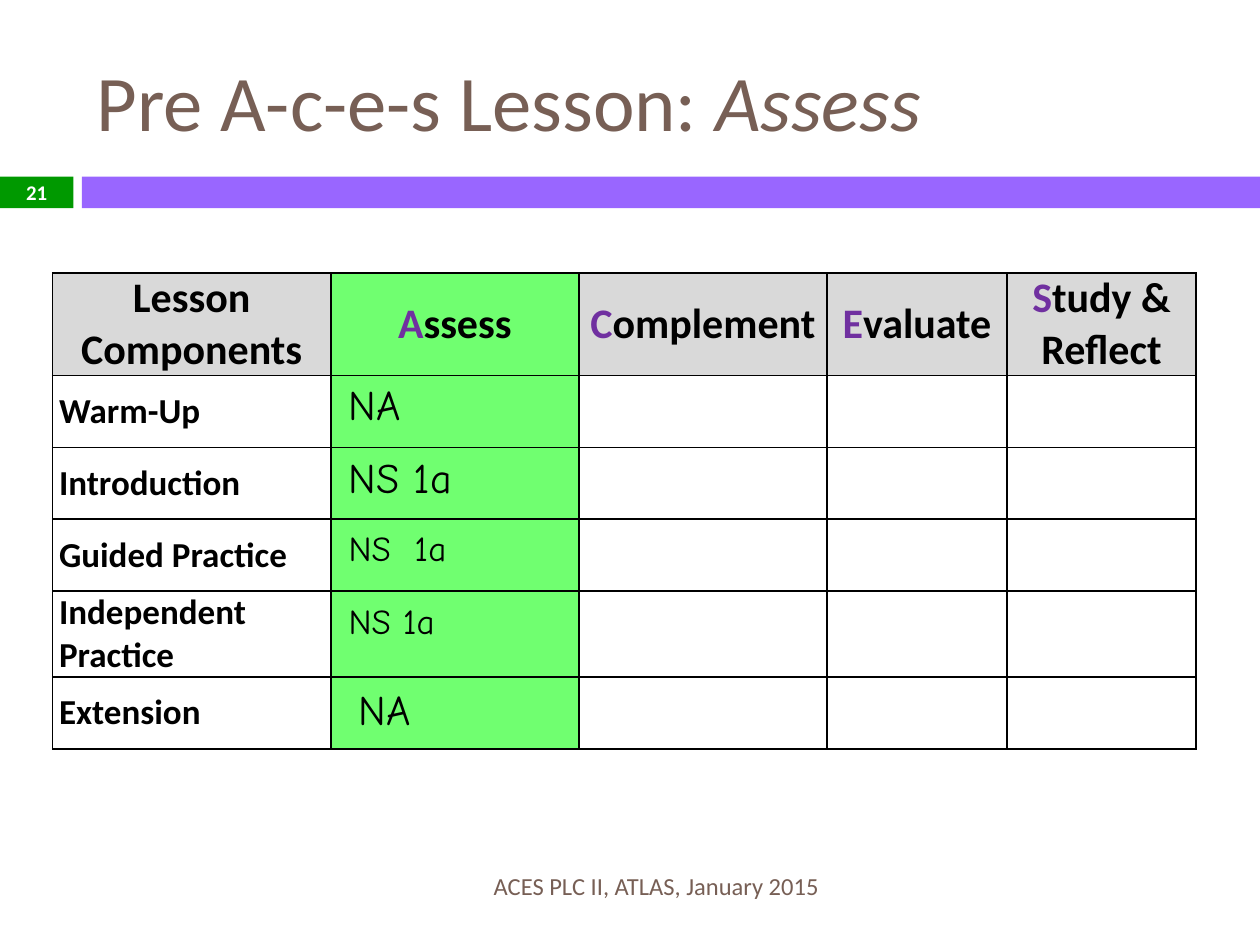
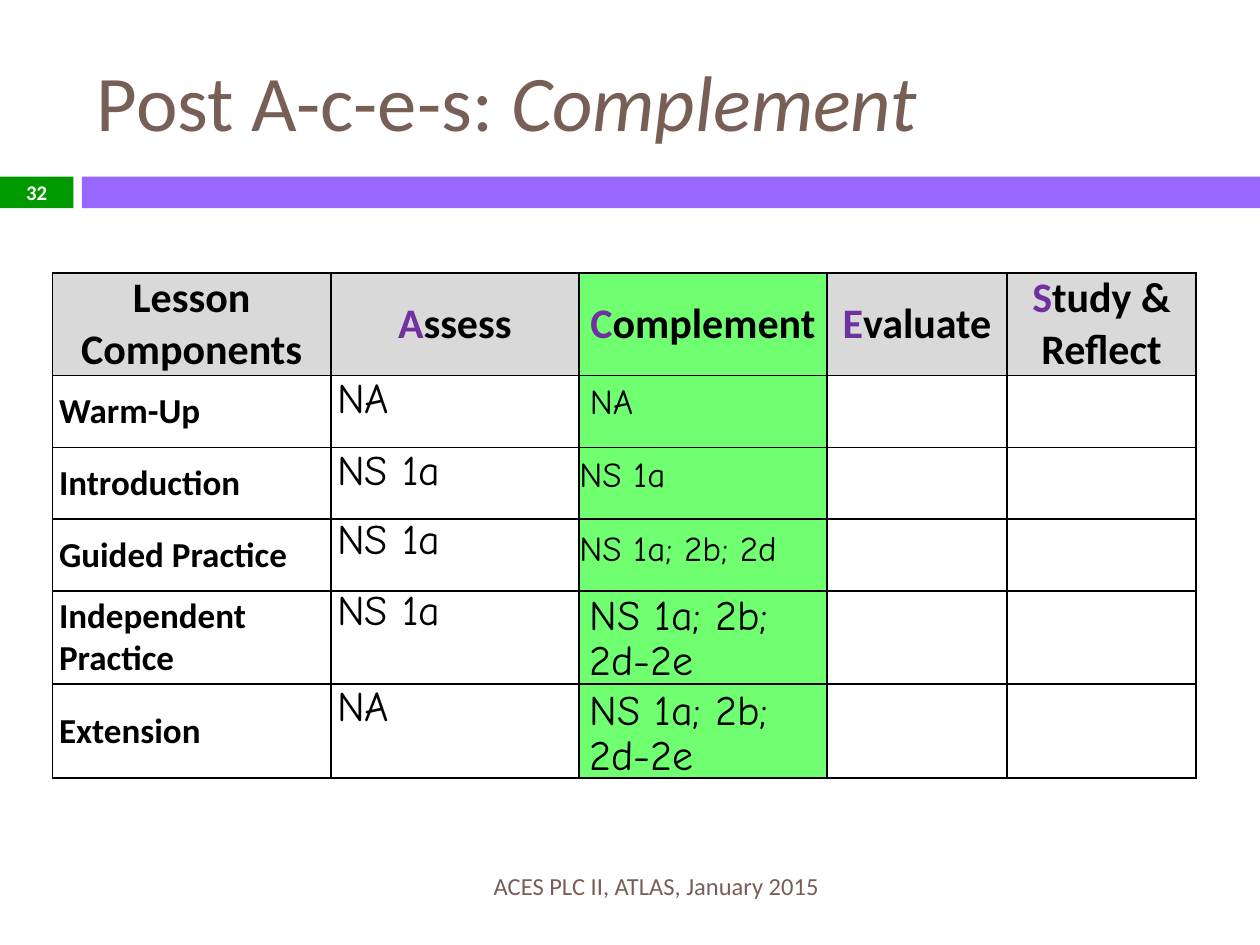
from dataclasses import dataclass
from typing import Any

from lxml import etree
from pptx import Presentation
from pptx.dml.color import RGBColor
from pptx.enum import shapes, text
from pptx.oxml import ns
from pptx.util import Cm, Pt

BLACK = RGBColor(0x00, 0x00, 0x00)
WHITE = RGBColor(0xFF, 0xFF, 0xFF)
BROWN = RGBColor(0x77, 0x5F, 0x55)
GREEN = RGBColor(0x00, 0x99, 0x00)
VIOLET = RGBColor(0x99, 0x66, 0xFF)
PURPLE = RGBColor(0x70, 0x30, 0xA0)
GREY = RGBColor(0xD9, 0xD9, 0xD9)
LIME = RGBColor(0x70, 0xFF, 0x70)

SANS = "Calibri"
HAND = "Comic Neue"
LEFT = text.PP_ALIGN.LEFT
CENTER = text.PP_ALIGN.CENTER
RIGHT = text.PP_ALIGN.RIGHT
TOP = text.MSO_ANCHOR.TOP
MIDDLE = text.MSO_ANCHOR.MIDDLE

HEADS = ["Lesson Components", "Assess", "Complement", "Evaluate", "Study & Reflect"]
PARTS = ["Warm-Up", "Introduction", "Guided Practice", "Independent Practice", "Extension"]
WIDTHS = [5.61, 5, 5, 3.63, 3.81]
FOOTER = "ACES PLC II, ATLAS, January 2015"


@dataclass
class Box:
    left: float
    top: float
    width: float
    height: float

    def place(self) -> tuple[Cm, Cm, Cm, Cm]:
        return Cm(self.left), Cm(self.top), Cm(self.width), Cm(self.height)


@dataclass
class Run:
    words: str
    font: dict[str, Any]


@dataclass
class Note:
    words: str
    left: float
    top: float
    size: int


@dataclass
class Lesson:
    number: int
    title: str
    stress: str
    focus: int
    heights: list[float]
    answers: list[tuple[str, float]]
    span: float
    notes: list[Note]


TITLE = Box(1.7, 0.64, 22.66, 2.74)
BADGE = Box(0, 3.56, 1.48, 0.64)
BAND = Box(1.65, 3.56, 23.75, 0.64)
GRID = Box(1.06, 5.5, sum(WIDTHS), 9.5)
FOOT = Box(1.7, 17.35, 15.06, 1.02)

LESSONS = [
    Lesson(
        21, "Pre A-c-e-s Lesson: ", "Assess", 1,
        [2.06, 1.45, 1.45, 1.45, 1.72, 1.45], [], 4.45,
        [
            Note("NA", 6.78, 7.62, 24),
            Note("NS 1a", 6.78, 9.1, 24),
            Note("NS  1a", 6.78, 10.58, 20),
            Note("NS 1a", 6.78, 12.06, 20),
            Note("NA", 6.98, 13.76, 24),
        ],
    ),
    Lesson(
        32, "Post A-c-e-s: ", "Complement", 2,
        [2.06, 1.45, 1.45, 1.45, 1.87, 1.9],
        [("NA", 1), ("NS 1a", 1), ("NS 1a", 0.9), ("NS 1a", 0.9), ("NA", 1)], 5.5,
        [
            Note("NA", 11.64, 7.62, 20),
            Note("NS 1a", 11.43, 9.1, 20),
            Note("NS 1a; 2b; 2d", 11.43, 10.58, 20),
            Note("NS 1a; 2b; 2d-2e", 11.64, 11.85, 24),
            Note("NS 1a; 2b; 2d-2e", 11.64, 13.76, 24),
        ],
    ),
]


def style(item: Any, values: dict[str, Any]) -> None:
    for name, value in values.items():
        setattr(item, name, value)


def font(size: float, color: RGBColor = BLACK, name: str = SANS,
         bold: bool = False, italic: bool = False) -> dict[str, Any]:
    return {"size": Pt(size), "color": color, "name": name, "bold": bold, "italic": italic}


def write(frame: Any, runs: list[Run], align: Any = LEFT, space: float = 1) -> None:
    line = frame.paragraphs[0]
    style(line, {"alignment": align, "line_spacing": space})
    for run in runs:
        piece = line.add_run()
        piece.text = run.words
        values = dict(run.font)
        piece.font.color.rgb = values.pop("color")
        style(piece.font, values)


def add_bar(slide: Any, box: Box, color: RGBColor) -> Any:
    bar = slide.shapes.add_shape(shapes.MSO_SHAPE.RECTANGLE, *box.place())
    bar.shadow.inherit = False
    bar.fill.solid()
    bar.fill.fore_color.rgb = color
    bar.line.fill.background()
    return bar


def add_text(slide: Any, box: Box, run: Run, align: Any = LEFT,
             anchor: Any = TOP, space: float = 1) -> None:
    frame = slide.shapes.add_textbox(*box.place()).text_frame
    style(frame, {"word_wrap": True, "vertical_anchor": anchor})
    write(frame, [run], align, space)


def set_cell(cell: Any, color: RGBColor, anchor: Any = MIDDLE) -> None:
    side = Cm(0.13)
    style(cell, {"margin_left": side, "margin_right": side, "margin_top": 0,
                 "margin_bottom": 0, "vertical_anchor": anchor})
    props = cell._tc.get_or_add_tcPr()
    for edge in ("a:lnL", "a:lnR", "a:lnT", "a:lnB"):
        line = etree.SubElement(props, ns.qn(edge), w=str(Pt(1)))
        fill = etree.SubElement(line, ns.qn("a:solidFill"))
        etree.SubElement(fill, ns.qn("a:srgbClr"), val=str(BLACK))
    cell.fill.solid()
    cell.fill.fore_color.rgb = color


def add_grid(slide: Any, lesson: Lesson) -> None:
    grid = slide.shapes.add_table(len(PARTS) + 1, len(HEADS), *GRID.place()).table
    style(grid, {"first_row": False, "horz_banding": False})
    for column, width in zip(grid.columns, WIDTHS):
        column.width = Cm(width)
    for row, height in zip(grid.rows, lesson.heights):
        row.height = Cm(height)

    for col, head in enumerate(HEADS):
        cell = grid.cell(0, col)
        set_cell(cell, LIME if col == lesson.focus else GREY)
        cut = 1 if col else 0
        runs = [Run(head[:cut], font(24, PURPLE, bold=True))] if cut else []
        write(cell.text_frame, runs + [Run(head[cut:], font(24, bold=True))], CENTER)

    for row, part in enumerate(PARTS, 1):
        for col in range(len(HEADS)):
            color = LIME if col == lesson.focus else WHITE
            set_cell(grid.cell(row, col), color, TOP if col else MIDDLE)
        write(grid.cell(row, 0).text_frame, [Run(part, font(20, bold=True))])

    for row, (words, space) in enumerate(lesson.answers, 1):
        write(grid.cell(row, 1).text_frame, [Run(words, font(24, name=HAND))], space=space)


def add_title(slide: Any, lesson: Lesson) -> None:
    title = slide.shapes.title
    style(title, dict(zip(("left", "top", "width", "height"), TITLE.place())))
    frame = title.text_frame
    style(frame, {"vertical_anchor": MIDDLE, "auto_size": text.MSO_AUTO_SIZE.NONE})
    write(frame, [Run(lesson.title, font(45, BROWN)),
                  Run(lesson.stress, font(45, BROWN, italic=True))])


def add_lesson(deck: Any, lesson: Lesson) -> None:
    slide = deck.slides.add_slide(deck.slide_layouts[5])
    add_title(slide, lesson)
    badge = add_bar(slide, BADGE, GREEN)
    badge.text_frame.vertical_anchor = MIDDLE
    write(badge.text_frame, [Run(str(lesson.number), font(11.9, WHITE, bold=True))], CENTER)
    add_bar(slide, BAND, VIOLET)
    add_grid(slide, lesson)
    for note in lesson.notes:
        box = Box(note.left, note.top, lesson.span, 1.2)
        add_text(slide, box, Run(note.words, font(note.size, name=HAND)), space=0.9)
    add_text(slide, FOOT, Run(FOOTER, font(14, BROWN)), RIGHT, MIDDLE)


def main() -> None:
    deck = Presentation()
    style(deck, {"slide_width": Cm(25.4), "slide_height": Cm(19.05)})
    for lesson in LESSONS:
        add_lesson(deck, lesson)
    deck.save("out.pptx")


if __name__ == "__main__":
    main()
